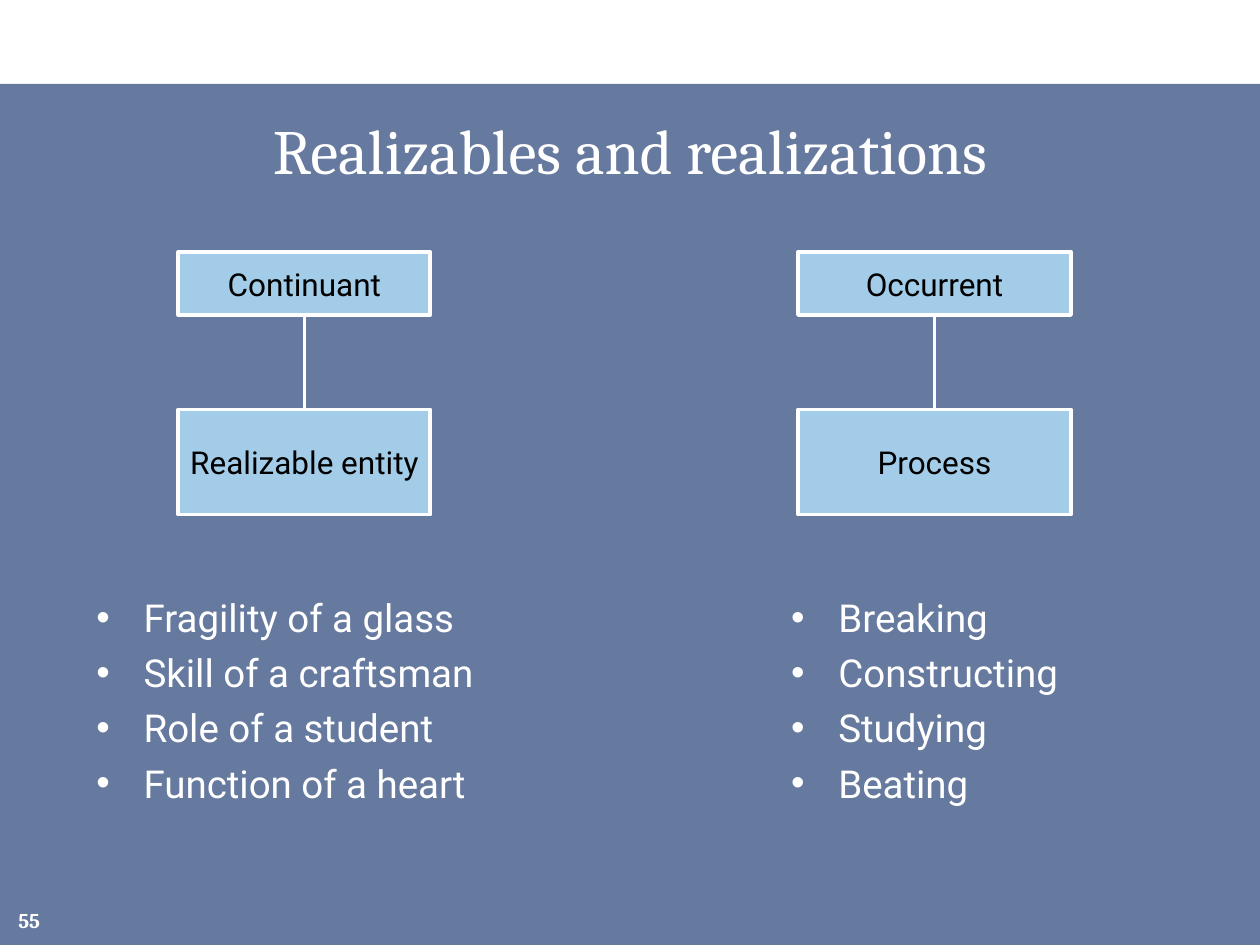
from pptx import Presentation
from pptx.dml.color import RGBColor
from pptx.enum.shapes import MSO_CONNECTOR, MSO_SHAPE
from pptx.enum.text import MSO_ANCHOR, PP_ALIGN
from pptx.oxml.ns import qn
from pptx.util import Pt
from lxml import etree

RECTANGLE = MSO_SHAPE.RECTANGLE
STRAIGHT = MSO_CONNECTOR.STRAIGHT
TOP, MIDDLE = MSO_ANCHOR.TOP, MSO_ANCHOR.MIDDLE
LEFT, CENTER, RIGHT = PP_ALIGN.LEFT, PP_ALIGN.CENTER, PP_ALIGN.RIGHT

COLORS = {"navy": "002060", "sky": "A2CCE8", "white": "FFFFFF", "black": "000000"}
SERIF, SANS = "Cambria", "Roboto"
OUTLINE = 2.25
INDENT = 27
PARENT_TOP, PARENT_HEIGHT = 144, 36
CHILD_TOP, CHILD_HEIGHT = 234, 60
LIST_TOP, LIST_HEIGHT = 336, 168

HIERARCHIES = [
    {
        "left": 102, "width": 144,
        "parent": "Continuant", "child": "Realizable entity",
        "list_left": 48, "list_width": 318,
        "examples": ["Fragility of a glass", "Skill of a craftsman",
                     "Role of a student", "Function of a heart"],
    },
    {
        "left": 456, "width": 156,
        "parent": "Occurrent", "child": "Process",
        "list_left": 445, "list_width": 197,
        "examples": ["Breaking", "Constructing", "Studying", "Beating"],
    },
]


def rgb(name):
    """Return the named palette colour."""
    return RGBColor.from_string(COLORS[name])


def add_bullet(paragraph):
    """Give a paragraph a white hanging bullet."""
    properties = paragraph._p.get_or_add_pPr()
    properties.set("marL", str(Pt(INDENT)))
    properties.set("indent", str(-Pt(INDENT)))
    color = etree.SubElement(properties, qn("a:buClr"))
    etree.SubElement(color, qn("a:srgbClr"), val=COLORS["white"])
    etree.SubElement(properties, qn("a:buFont"), typeface="Arial")
    etree.SubElement(properties, qn("a:buChar"), char="•")


def write_text(frame, lines, *, size, font=SANS, color="white", bold=False,
               align=LEFT, anchor=TOP, wrap=True, bullets=False, gap=0):
    """Fill a text frame with one paragraph per line."""
    frame.word_wrap = wrap
    frame.vertical_anchor = anchor
    for index, line in enumerate(lines):
        paragraph = frame.add_paragraph() if index else frame.paragraphs[0]
        if bullets:
            add_bullet(paragraph)
        paragraph.alignment = align
        paragraph.space_before = Pt(gap if index else 0)
        run = paragraph.add_run()
        run.text = line
        run.font.name = font
        run.font.size = Pt(size)
        run.font.bold = bold
        run.font.color.rgb = rgb(color)


def add_text(slide, left, top, width, height, lines, **text_format):
    """Add a text box."""
    box = slide.shapes.add_textbox(Pt(left), Pt(top), Pt(width), Pt(height))
    write_text(box.text_frame, lines, **text_format)


def add_rectangle(slide, left, top, width, height, fill):
    """Add a plain filled rectangle without a line."""
    rectangle = slide.shapes.add_shape(
        RECTANGLE, Pt(left), Pt(top), Pt(width), Pt(height))
    rectangle.shadow.inherit = False
    rectangle.fill.solid()
    rectangle.fill.fore_color.rgb = rgb(fill)
    rectangle.line.fill.background()
    return rectangle


def add_backdrop(slide):
    """Add the translucent panel under the content."""
    panel = add_rectangle(slide, 0, 48, 720, 492, "navy")
    color = panel.fill._xPr.find(qn("a:solidFill")).find(qn("a:srgbClr"))
    etree.SubElement(color, qn("a:alpha"), val="60000")


def add_category(slide, left, top, width, height, label):
    """Add an outlined box that names a category."""
    category = add_rectangle(slide, left, top, width, height, "sky")
    category.line.color.rgb = rgb("white")
    category.line.width = Pt(OUTLINE)
    write_text(category.text_frame, [label], size=18, color="black",
               align=CENTER, anchor=MIDDLE, wrap=False)


def add_link(slide, x, top, bottom):
    """Join two categories with a vertical line."""
    link = slide.shapes.add_connector(STRAIGHT, Pt(x), Pt(top), Pt(x), Pt(bottom))
    link.line.color.rgb = rgb("white")
    link.line.width = Pt(OUTLINE)
    etree.SubElement(link._element.spPr, qn("a:effectLst"))


def add_hierarchy(slide, left, width, parent, child, list_left, list_width, examples):
    """Add a parent and child category with a list of examples."""
    add_category(slide, left, PARENT_TOP, width, PARENT_HEIGHT, parent)
    add_category(slide, left, CHILD_TOP, width, CHILD_HEIGHT, child)
    add_link(slide, left + width / 2, PARENT_TOP + PARENT_HEIGHT, CHILD_TOP)
    add_text(slide, list_left, LIST_TOP, list_width, LIST_HEIGHT, examples,
             size=22, bullets=True, gap=5.1)


def main():
    """Build and save the slide."""
    presentation = Presentation()
    presentation.slide_width, presentation.slide_height = Pt(720), Pt(540)
    slide = presentation.slides.add_slide(presentation.slide_layouts[6])
    add_backdrop(slide)
    add_text(slide, 18, 60, 684, 60, ["Realizables and realizations"],
             size=36, font=SERIF, align=CENTER)
    for hierarchy in HIERARCHIES:
        add_hierarchy(slide, **hierarchy)
    add_text(slide, -6, 511, 36, 29, ["55"], size=12, font=SERIF, bold=True,
             align=RIGHT, anchor=MIDDLE)
    presentation.save("out.pptx")


if __name__ == "__main__":
    main()
